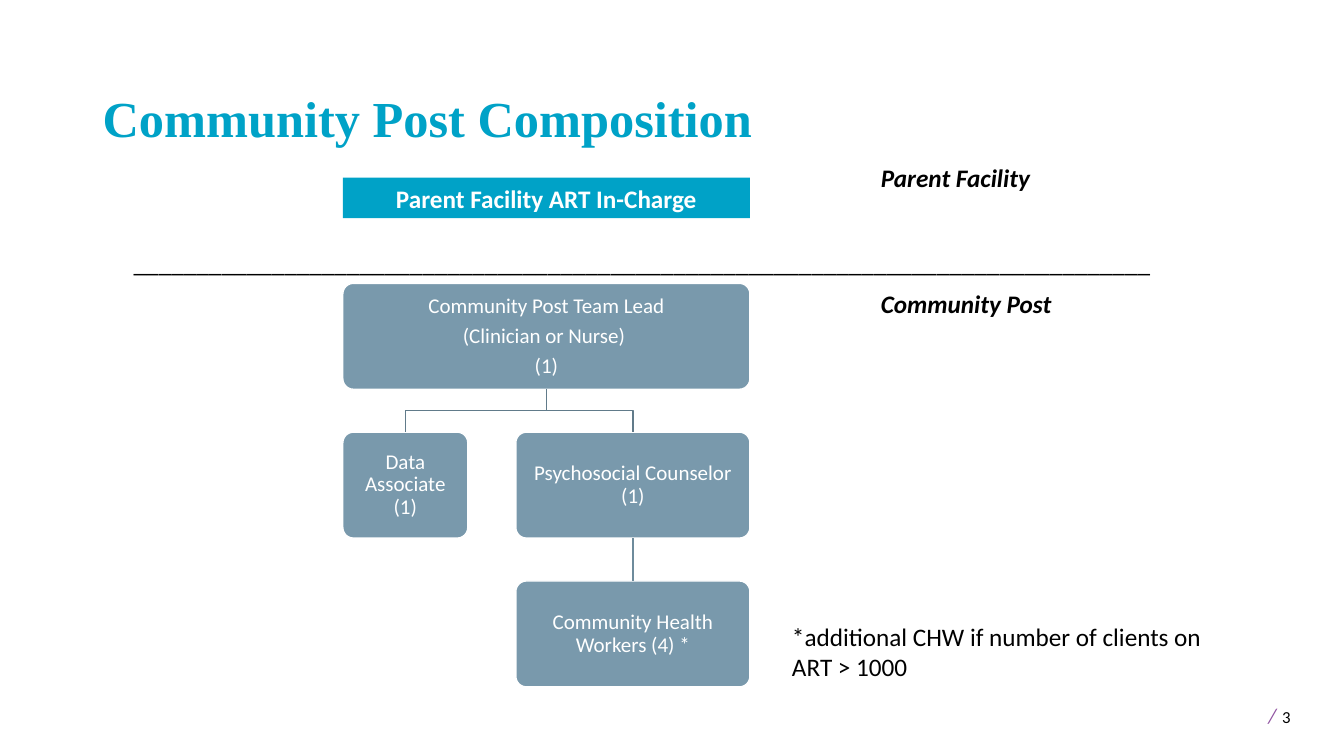
from lxml import etree
from pptx import Presentation
from pptx.dml.color import RGBColor
from pptx.enum import shapes, text
from pptx.oxml import ns
from pptx.util import Cm, Pt

TITLE = "Community Post Composition"
IN_CHARGE = "Parent Facility ART In-Charge"
TEAM = {
    "lead": (["Community Post Team Lead", "(Clinician or Nurse) ", "(1)"], 0, 8.64, 10.26),
    "data": (["Data Associate (1)"], 1, 8.64, 3.15),
    "counselor": (["Psychosocial Counselor (1)"], 1, 13.0, 5.9),
    "workers": (["Community Health Workers (4) *"], 2, 13.0, 5.9),
}
BRANCHES = [("lead", "data"), ("lead", "counselor")]
LABELS = [
    ("Community Post", 21.95, 7.14, 9.6, 1.02, True),
    ("_" * 81, 3.12, 6.1, 28.42, 1.02, False),
    ("Parent Facility", 21.95, 3.96, 9.6, 1.02, True),
    ("*additional CHW if number of clients on ART > 1000", 19.71, 15.52, 11.84, 1.8, False),
]
PAGE_MARK = [(" ", 18, "000000"), ("/", 15, "9053A1"), (" ", 18, "000000"), ("3", 12, "000000")]

TEAM_TOP, LEVEL_STEP, BOX_HEIGHT = 7.14, 3.75, 2.67
FONT = "Calibri"


def color(value):
    return RGBColor.from_string(value)


def style(font, size, shade, bold=False, italic=False, name=FONT):
    font.name, font.size, font.bold, font.italic = name, Pt(size), bold, italic
    font.color.rgb = color(shade)


def add_box(slide, preset, fill, left, top, width, height):
    box = slide.shapes.add_shape(preset, Cm(left), Cm(top), Cm(width), Cm(height))
    box.shadow.inherit = False
    box.fill.solid()
    box.fill.fore_color.rgb = color(fill)
    return box


def add_label(slide, left, top, width, height):
    frame = slide.shapes.add_textbox(Cm(left), Cm(top), Cm(width), Cm(height)).text_frame
    frame.word_wrap = True
    return frame


def add_member(slide, lines, level, left, width):
    top = TEAM_TOP + level * LEVEL_STEP
    box = add_box(slide, shapes.MSO_SHAPE.ROUNDED_RECTANGLE, "7999AC", left, top, width, BOX_HEIGHT)
    box.adjustments[0] = 0.1
    box.line.color.rgb = color("FFFFFF")
    box.line.width = Pt(1)
    frame = box.text_frame
    frame.word_wrap = True
    frame.vertical_anchor = text.MSO_ANCHOR.MIDDLE
    frame.margin_left = frame.margin_right = frame.margin_top = frame.margin_bottom = Cm(0.2)
    frame.text = "\n".join(lines)
    for line in frame.paragraphs:
        line.alignment = text.PP_ALIGN.CENTER
        line.line_spacing = 0.9
        line.space_after = Pt(5.25)
        style(line.font, 15, "FFFFFF")
    return box


def add_branch(slide, parent, child):
    start_x = parent.left + parent.width // 2
    start_y = parent.top + parent.height
    end_x = child.left + child.width // 2
    bend_y = (start_y + child.top) // 2
    outline = slide.shapes.build_freeform(start_x, start_y)
    outline.add_line_segments([(start_x, bend_y), (end_x, bend_y), (end_x, child.top)], close=False)
    branch = outline.convert_to_shape()
    branch.shadow.inherit = False
    branch.fill.background()
    branch.line.color.rgb = color("617B8A")
    branch.line.width = Pt(1)


def add_link(slide, parent, child):
    link = slide.shapes.add_connector(shapes.MSO_CONNECTOR.STRAIGHT, 0, 0, 0, 0)
    link.begin_connect(parent, 2)
    link.end_connect(child, 0)
    link.line.color.rgb = color("6E8B9C")
    link.line.width = Pt(1)
    etree.SubElement(link._element.spPr, ns.qn("a:effectLst"))


def main():
    deck = Presentation()
    deck.slide_width, deck.slide_height = Cm(33.87), Cm(19.05)
    slide = deck.slides.add_slide(deck.slide_layouts[5])

    title = slide.shapes.title
    title.left, title.top, title.width, title.height = Cm(2.33), Cm(1.01), Cm(29.21), Cm(2.87)
    title.text_frame.text = TITLE
    title.text_frame.auto_size = text.MSO_AUTO_SIZE.NONE
    title.text_frame.vertical_anchor = text.MSO_ANCHOR.BOTTOM
    heading = title.text_frame.paragraphs[0]
    heading.alignment = text.PP_ALIGN.LEFT
    heading.line_spacing = 0.9
    style(heading.font, 36, "00A2C7", bold=True, name="Times New Roman")

    members = {role: add_member(slide, *details) for role, details in TEAM.items()}
    for parent, child in BRANCHES:
        add_branch(slide, members[parent], members[child])
    add_link(slide, members["counselor"], members["workers"])

    in_charge = add_box(slide, shapes.MSO_SHAPE.RECTANGLE, "00A2C7", 8.64, 4.48, 10.26, 1.02)
    in_charge.line.fill.background()
    in_charge.text_frame.text = IN_CHARGE
    in_charge.text_frame.vertical_anchor = text.MSO_ANCHOR.MIDDLE
    caption = in_charge.text_frame.paragraphs[0]
    caption.alignment = text.PP_ALIGN.CENTER
    style(caption.font, 18, "FFFFFF", bold=True)

    for wording, left, top, width, height, strong in LABELS:
        label = add_label(slide, left, top, width, height)
        label.text = wording
        style(label.paragraphs[0].font, 18, "000000", bold=strong, italic=strong)

    page = add_label(slide, 31.57, 17.48, 2.2, 1.02).paragraphs[0]
    for wording, size, shade in PAGE_MARK:
        mark = page.add_run()
        mark.text = wording
        style(mark.font, size, shade, italic=wording == "/")

    deck.save("out.pptx")


if __name__ == "__main__":
    main()
